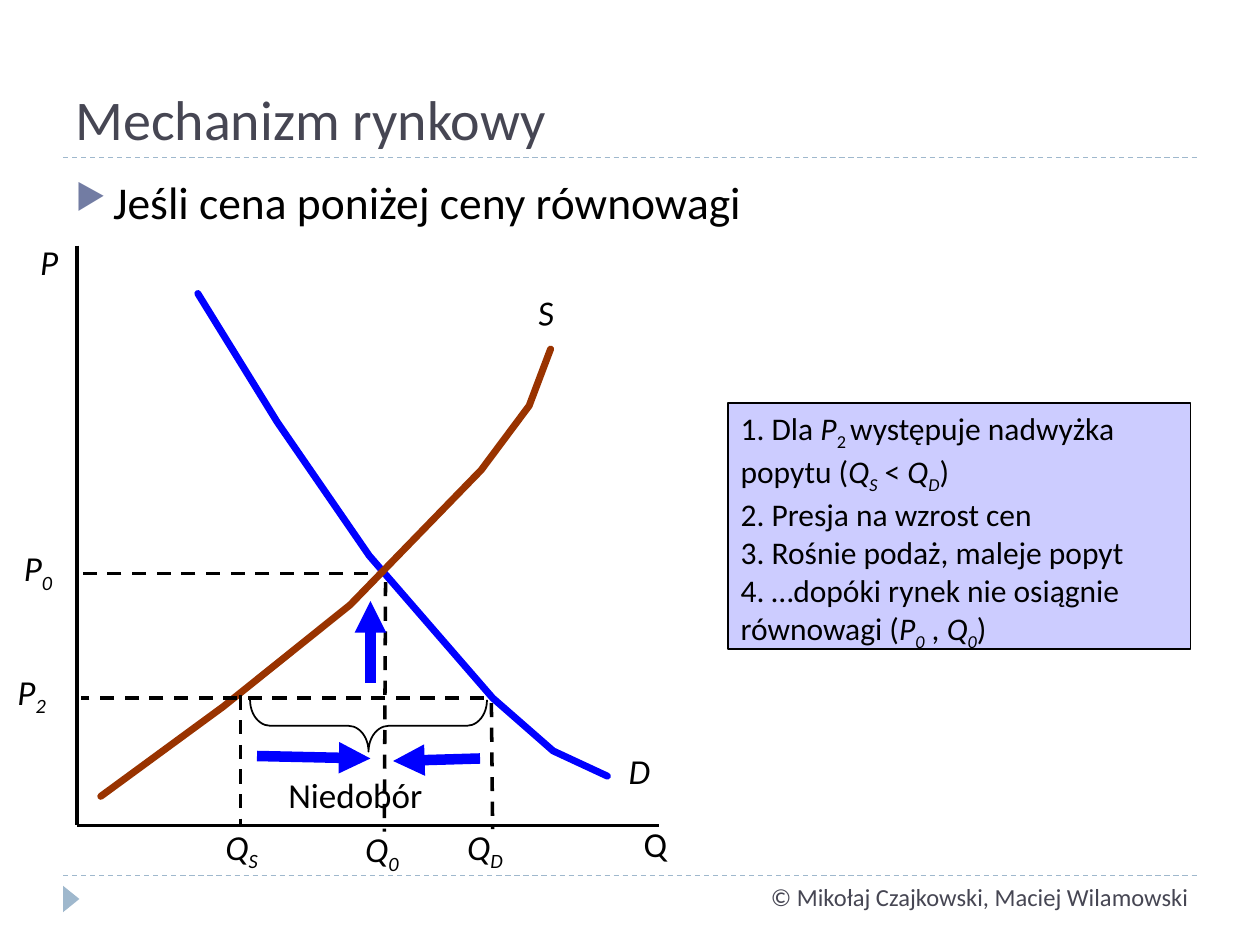
from dataclasses import dataclass

from lxml import etree
from pptx import Presentation
from pptx.dml.color import RGBColor
from pptx.enum.dml import MSO_LINE
from pptx.enum.shapes import MSO_CONNECTOR, MSO_SHAPE
from pptx.enum.text import MSO_ANCHOR, MSO_AUTO_SIZE, PP_ALIGN
from pptx.oxml.ns import qn
from pptx.util import Emu, Pt

DASH = MSO_LINE.DASH
STRAIGHT = MSO_CONNECTOR.STRAIGHT
RECTANGLE, TRIANGLE, LEFT_BRACE = MSO_SHAPE.RECTANGLE, MSO_SHAPE.ISOSCELES_TRIANGLE, MSO_SHAPE.LEFT_BRACE
BOTTOM, TOP = MSO_ANCHOR.BOTTOM, MSO_ANCHOR.TOP
LEFT = PP_ALIGN.LEFT
FIT_TEXT = MSO_AUTO_SIZE.SHAPE_TO_FIT_TEXT

EMU_PER_PX = 9144  # 100 px to the inch
FONT = "Calibri"
BLACK, BLUE, BROWN, SLATE = "000000", "0000FF", "993300", "464653"
PALE_BLUE, LILAC, BULLET_COLOR = "9FB8CD", "CCCCFF", "727CA3"


@dataclass(frozen=True)
class Run:
    text: str
    italic: bool = False
    subscript: bool = False


@dataclass(frozen=True)
class Label:
    box: tuple[int, int, int, int]
    runs: list[Run]
    size: int = 20
    color: str = BLACK
    rotation: float = 0


@dataclass(frozen=True)
class Line:
    start: tuple[int, int]
    end: tuple[int, int]
    color: str = BLACK
    width: float = 2
    dashed: bool = False
    arrow: bool = False


@dataclass(frozen=True)
class Curve:
    points: list[tuple[int, int]]
    color: str


def px(value: int) -> Emu:
    return Emu(value * EMU_PER_PX)


def rgb(color: str) -> RGBColor:
    return RGBColor.from_string(color)


def symbol(letter: str, index: str = "") -> list[Run]:
    """An italic variable with an optional subscript."""
    runs = [Run(letter, italic=True)]
    return runs + [Run(index, italic=True, subscript=True)] if index else runs


def fill_paragraph(paragraph, runs: list[Run], size: int, color: str) -> None:
    paragraph.alignment = LEFT
    for item in runs:
        run = paragraph.add_run()
        run.text = item.text
        font = run.font
        font.name, font.size, font.italic = FONT, Pt(size), item.italic
        font.color.rgb = rgb(color)
        if item.subscript:
            font._element.set("baseline", "-25000")


def draw_label(slide, label: Label, wrap: bool = False, anchor=TOP):
    shape = slide.shapes.add_textbox(*map(px, label.box))
    shape.rotation = label.rotation
    frame = shape.text_frame
    frame.word_wrap = wrap
    frame.vertical_anchor = anchor
    if not wrap:
        frame.auto_size = FIT_TEXT
    fill_paragraph(frame.paragraphs[0], label.runs, label.size, label.color)
    return shape


def draw_line(slide, line: Line) -> None:
    connector = slide.shapes.add_connector(STRAIGHT, *map(px, line.start + line.end))
    connector.line.color.rgb = rgb(line.color)
    connector.line.width = Pt(line.width)
    if line.dashed:
        connector.line.dash_style = DASH
    if line.arrow:
        etree.SubElement(connector.line._get_or_add_ln(), qn("a:tailEnd"), type="triangle")
    etree.SubElement(connector._element.spPr, qn("a:effectLst"))


def draw_curve(slide, curve: Curve) -> None:
    builder = slide.shapes.build_freeform(*curve.points[0], scale=EMU_PER_PX)
    builder.add_line_segments(curve.points[1:], close=False)
    shape = builder.convert_to_shape()
    shape.shadow.inherit = False
    shape.fill.background()
    shape.line.color.rgb = rgb(curve.color)
    shape.line.width = Pt(4)
    outline = shape.line._get_or_add_ln()
    outline.set("cap", "rnd")
    etree.SubElement(outline, qn("a:round"))


def draw_shape(slide, kind, box, fill: str = "", outline: str = "", rotation: float = 0):
    shape = slide.shapes.add_shape(kind, *map(px, box))
    shape.shadow.inherit = False
    shape.rotation = rotation
    if fill:
        shape.fill.solid()
        shape.fill.fore_color.rgb = rgb(fill)
    else:
        shape.fill.background()
    if outline:
        shape.line.color.rgb = rgb(outline)
        shape.line.width = Pt(1)
    else:
        shape.line.fill.background()
    return shape


def add_bullet(paragraph) -> None:
    paragraph.space_before = Pt(6)
    properties = paragraph._p.get_or_add_pPr()
    properties.set("marL", str(px(30)))
    properties.set("indent", str(px(-30)))
    color = etree.SubElement(properties, qn("a:buClr"))
    etree.SubElement(color, qn("a:srgbClr"), val=BULLET_COLOR)
    etree.SubElement(properties, qn("a:buSzPct"), val="76000")
    etree.SubElement(properties, qn("a:buChar"), char="▶")


def draw_explanation(slide, paragraphs: list[list[Run]]) -> None:
    shape = draw_shape(slide, RECTANGLE, (578, 320, 367, 195), LILAC, BLACK)
    frame = shape.text_frame
    frame.word_wrap = True
    frame.vertical_anchor = TOP
    for index, runs in enumerate(paragraphs):
        paragraph = frame.add_paragraph() if index else frame.paragraphs[0]
        fill_paragraph(paragraph, runs, 18, BLACK)


TITLE = Label((50, 17, 900, 108), [Run("Mechanizm rynkowy")], 32, SLATE)
BODY = Label((50, 133, 900, 60), [Run("Jeśli cena poniżej ceny równowagi")], 26)
FOOTER = Label((602, 695, 354, 34), [Run("© Mikołaj Czajkowski, Maciej Wilamowski")], 14, SLATE)

RULES = [Line((50, y), (950, y), PALE_BLUE, 0.75, dashed=True) for y in (695, 125)]
CURVES = [
    Curve([(157, 233), (220, 335), (293, 441), (391, 554), (439, 596), (482, 616)], BLUE),
    Curve([(80, 632), (177, 561), (278, 480), (382, 373), (420, 322), (437, 277)], BROWN),
]
AXES = [Line((61, 195), (61, 655)), Line((61, 655), (523, 655))]
GUIDES = [
    Line(start, end, dashed=True)
    for start, end in [
        ((191, 552), (191, 656)),
        ((390, 558), (391, 658)),
        ((384, 554), (64, 554)),
        ((306, 462), (305, 660)),
        ((292, 455), (63, 455)),
    ]
]
ARROWS = [
    Line(start, end, BLUE, 6, arrow=True)
    for start, end in [((204, 600), (294, 602)), ((381, 602), (312, 604)), ((294, 542), (294, 477))]
]
LABELS = [
    Label((489, 590, 37, 43), symbol("D")),
    Label((417, 226, 33, 43), symbol("S"), rotation=355.4),
    Label((169, 650, 47, 43), symbol("Q", "S")),
    Label((361, 650, 50, 43), symbol("Q", "D")),
    Label((280, 652, 53, 43), symbol("Q", "0")),
    Label((4, 527, 45, 43), symbol("P", "2")),
    Label((9, 429, 45, 43), symbol("P", "0")),
    Label((22, 186, 35, 43), symbol("P")),
    Label((501, 648, 39, 43), [Run("Q")]),
    Label((219, 609, 127, 43), [Run("Niedobór")]),
]
EXPLANATION = [
    [Run("1. Dla "), *symbol("P"), Run("2 ", subscript=True), Run("występuje nadwyżka popytu ("),
     *symbol("Q", "S"), Run(" < "), *symbol("Q", "D"), Run(")")],
    [Run("2. Presja na wzrost cen")],
    [Run("3. Rośnie podaż, maleje popyt")],
    [Run("4. …dopóki rynek nie osiągnie równowagi ("), *symbol("P", "0"), Run(" , "),
     *symbol("Q", "0"), Run(")")],
]


def main() -> None:
    presentation = Presentation()
    presentation.slide_width, presentation.slide_height = px(1000), px(750)
    slide = presentation.slides.add_slide(presentation.slide_layouts[6])

    for rule in RULES:
        draw_line(slide, rule)
    draw_shape(slide, TRIANGLE, (46, 707, 21, 13), PALE_BLUE, rotation=90)
    draw_label(slide, FOOTER)
    draw_label(slide, TITLE, wrap=True, anchor=BOTTOM)
    body = draw_label(slide, BODY, wrap=True)
    add_bullet(body.text_frame.paragraphs[0])

    for curve in CURVES:
        draw_curve(slide, curve)
    for line in GUIDES + AXES + ARROWS:
        draw_line(slide, line)
    for label in LABELS:
        draw_label(slide, label)
    brace = draw_shape(slide, LEFT_BRACE, (272, 482, 41, 188), outline=BLACK, rotation=270)
    brace.adjustments[0] = 0.39
    draw_explanation(slide, EXPLANATION)
    presentation.save("out.pptx")


if __name__ == "__main__":
    main()
